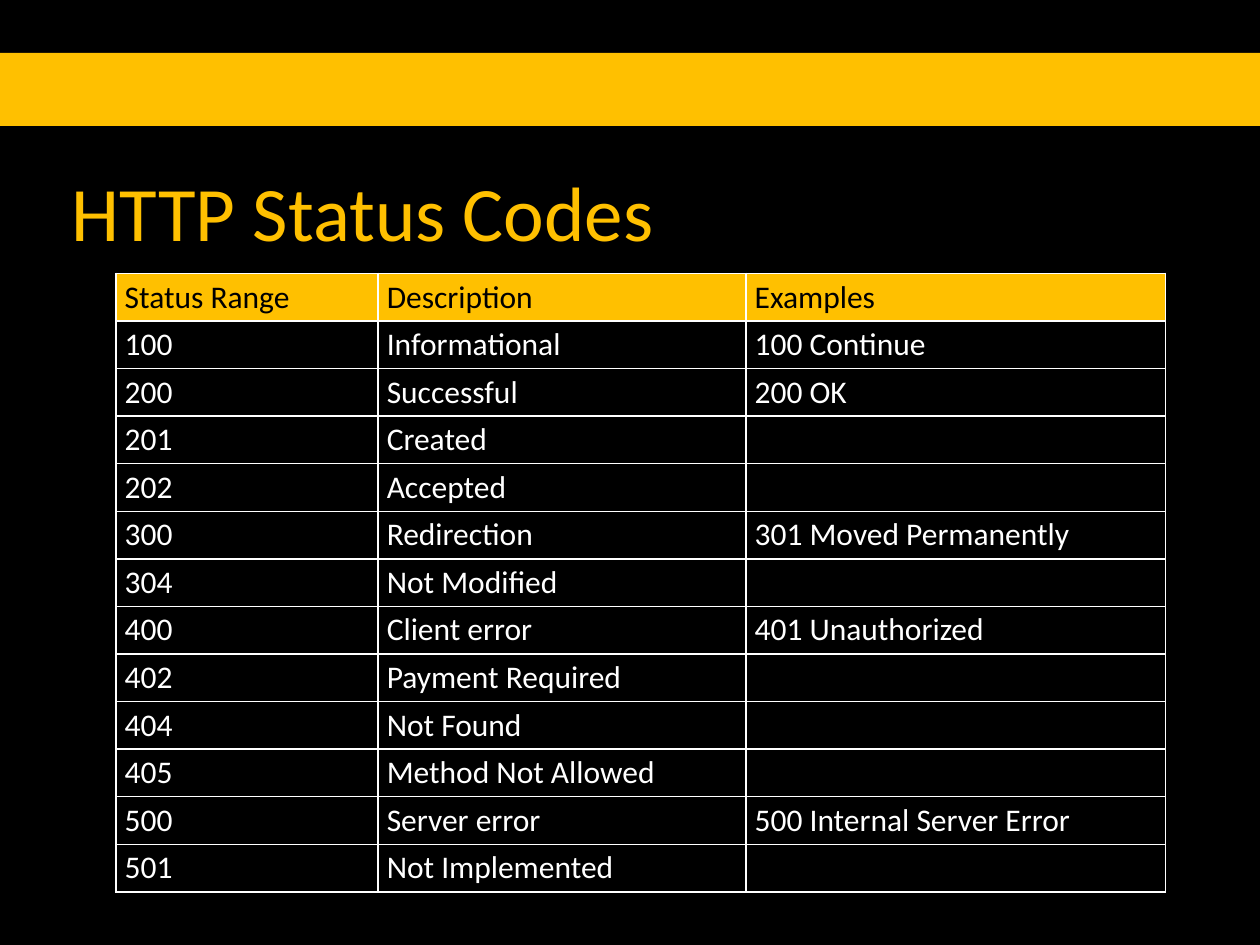
from lxml import etree
from pptx import Presentation
from pptx.dml.color import RGBColor
from pptx.enum import shapes, text
from pptx.oxml.ns import qn
from pptx import util as u

WIDE, HIGH = u.Inches(10), u.Inches(7.5)
HUES = {"back": "000000", "gold": "FFC000", "light": "FFFFFF"}
COLS = (2.08, 2.92, 3.33)
ROW = 4.91 / 13
ROWS = (
    ("Status Range", "Description", "Examples"),
    ("100", "Informational", "100 Continue"),
    ("200", "Successful", "200 OK"),
    ("201", "Created", ""),
    ("202", "Accepted", ""),
    ("300", "Redirection", "301 Moved Permanently"),
    ("304", "Not Modified", ""),
    ("400", "Client error", "401 Unauthorized"),
    ("402", "Payment Required", ""),
    ("404", "Not Found", ""),
    ("405", "Method Not Allowed", ""),
    ("500", "Server error", "500 Internal Server Error"),
    ("501", "Not Implemented", ""),
)


def hue(name):
    """Return the named colour."""
    return RGBColor.from_string(HUES[name])


def paint(fill, name):
    """Make a fill solid in the named colour."""
    fill.solid()
    fill.fore_color.rgb = hue(name)


def write(frame, words, size, name):
    """Write one paragraph into a text frame."""
    par = frame.paragraphs[0]
    par.text = words
    par.font.name = "Calibri"
    par.font.size = u.Pt(size)
    par.font.color.rgb = hue(name)


def add_band(slide):
    """Draw the gold band across the top."""
    band = slide.shapes.add_shape(
        shapes.MSO_SHAPE.RECTANGLE, 0, u.Inches(0.42), WIDE, u.Inches(0.58))
    band.shadow.inherit = False
    paint(band.fill, "gold")
    band.line.fill.background()


def add_title(slide, words):
    """Place the heading across nine tenths of the slide."""
    box = slide.shapes.add_textbox(
        int(WIDE * 0.05), u.Inches(1.17), int(WIDE * 0.9), u.Inches(1))
    frame = box.text_frame
    frame.word_wrap = True
    frame.vertical_anchor = text.MSO_ANCHOR.MIDDLE
    frame.margin_left = frame.margin_right = u.Inches(0.07)
    write(frame, words, 44, "gold")


def edge(cell):
    """Give a cell a thin light border on every side."""
    props = cell._tc.get_or_add_tcPr()
    for side in ("lnL", "lnR", "lnT", "lnB"):
        line = etree.SubElement(props, qn(f"a:{side}"), w=str(u.Pt(1)))
        fill = etree.SubElement(line, qn("a:solidFill"))
        etree.SubElement(fill, qn("a:srgbClr"), val=HUES["light"])


def fill_cell(cell, words, head):
    """Style one cell and write its words."""
    edge(cell)
    cell.margin_left = cell.margin_right = u.Inches(0.07)
    cell.margin_top = cell.margin_bottom = u.Pt(2.6)
    cell.vertical_anchor = (
        text.MSO_ANCHOR.MIDDLE if head else text.MSO_ANCHOR.TOP)
    if head:
        paint(cell.fill, "gold")
    else:
        cell.fill.background()
    write(cell.text_frame, words, 18, "back" if head else "light")


def add_grid(slide):
    """Build the table of status codes."""
    grid = slide.shapes.add_table(
        len(ROWS), len(COLS), u.Inches(0.92), u.Inches(2.17),
        u.Inches(sum(COLS)), u.Inches(ROW * len(ROWS))).table
    grid.horz_banding = False
    for col, wide in zip(grid.columns, COLS):
        col.width = u.Inches(wide)
    for r, (row, words) in enumerate(zip(grid.rows, ROWS)):
        row.height = u.Inches(ROW)
        for cell, word in zip(row.cells, words):
            fill_cell(cell, word, r == 0)


def main():
    """Build and save the slide."""
    deck = Presentation()
    deck.slide_width, deck.slide_height = WIDE, HIGH
    slide = deck.slides.add_slide(deck.slide_layouts[6])
    paint(slide.background.fill, "back")
    add_band(slide)
    add_title(slide, "HTTP Status Codes")
    add_grid(slide)
    deck.save("out.pptx")


if __name__ == "__main__":
    main()
